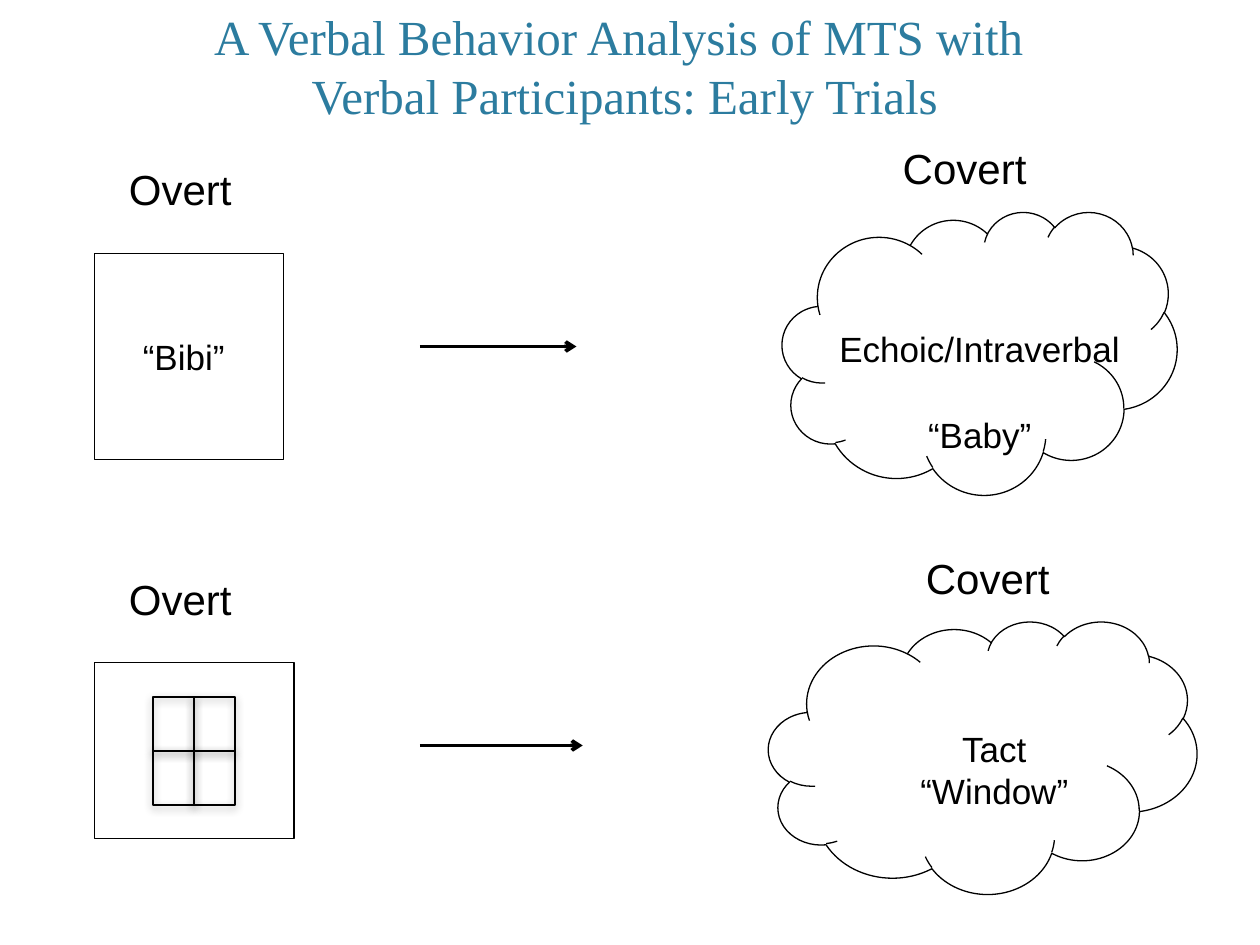
from dataclasses import dataclass

from lxml.etree import SubElement
from pptx import Presentation
from pptx.dml.color import RGBColor
from pptx.enum.shapes import MSO_CONNECTOR as CONN, MSO_SHAPE as SHAPE
from pptx.enum.text import MSO_ANCHOR as ANCHOR, PP_ALIGN as ALIGN
from pptx.oxml.ns import qn
from pptx.util import Inches, Pt


@dataclass(frozen=True)
class Theme:
    """Colours, fonts, type sizes and line widths of the slide."""
    ink: RGBColor = RGBColor(0, 0, 0)
    accent: RGBColor = RGBColor(0x2C, 0x7C, 0x9F)
    sans: str = "Arial"
    serif: str = "Times New Roman"
    title: int = 28
    heading: int = 24
    body: int = 20
    outline: float = 0.75
    pane: float = 1
    arrow: float = 2


@dataclass(frozen=True)
class Box:
    """A region in grid units; the slide is 120 columns by 90 rows."""
    col: float
    row: float
    cols: float
    rows: float

    def sub(self, col, row, cols, rows):
        """Return a box placed relative to this one."""
        return Box(self.col + col, self.row + row, cols, rows)

    def emu(self):
        """Return left, top, width and height as lengths."""
        return [Inches(v / 12) for v in (self.col, self.row, self.cols, self.rows)]


T = Theme()
TITLE = {"name": T.serif, "size": Pt(T.title)}
HEADING = {"name": T.sans, "size": Pt(T.heading)}
BODY = {"name": T.sans, "size": Pt(T.body)}


def add_text(s, box, lines, font, color=T.ink, align=ALIGN.CENTER,
             anchor=ANCHOR.MIDDLE, gap=0):
    """Add a text box with one paragraph per line."""
    tf = s.add_textbox(*box.emu()).text_frame
    for key, value in {"word_wrap": True, "vertical_anchor": anchor}.items():
        setattr(tf, key, value)
    for i, line in enumerate(lines):
        p = tf.add_paragraph() if i else tf.paragraphs[0]
        p.alignment = align
        p.space_before = Pt(gap if i else 0)
        r = p.add_run()
        r.text = line
        r.font.color.rgb = color
        for key, value in font.items():
            setattr(r.font, key, value)


def add_heading(s, box, text):
    """Add a left-aligned heading at the top of its box."""
    add_text(s, box, [text], HEADING, align=ALIGN.LEFT, anchor=ANCHOR.TOP)


def add_outline(s, kind, box, width=T.outline):
    """Add an unfilled preset shape with a plain outline."""
    sp = s.add_shape(kind, *box.emu())
    sp.shadow.inherit = False
    sp.fill.background()
    sp.line.color.rgb = T.ink
    sp.line.width = Pt(width)
    return sp


def add_glow(sp):
    """Give a shape a soft shadow below it."""
    effects = sp._element.spPr.find(qn("a:effectLst"))
    shadow = SubElement(effects, qn("a:outerShdw"), blurRad=str(Pt(5)),
                        dist=str(Pt(2)), dir="5400000", rotWithShape="0")
    color = SubElement(shadow, qn("a:srgbClr"), val=str(T.ink))
    SubElement(color, qn("a:alpha"), val="40000")


def add_arrow(s, box):
    """Add an arrow running along the top edge of its box."""
    x, y, w, _ = box.emu()
    c = s.add_connector(CONN.STRAIGHT, x, y, x + w, y)
    c.line.color.rgb = T.ink
    c.line.width = Pt(T.arrow)
    SubElement(c.line._get_or_add_ln(), qn("a:tailEnd"), type="arrow")
    SubElement(c._element.spPr, qn("a:effectLst"))


def add_window(s, box):
    """Divide the box into a two by two window of panes."""
    w, h = box.cols / 2, box.rows / 2
    for i in range(4):
        pane = box.sub(i // 2 * w, i % 2 * h, w, h)
        add_glow(add_outline(s, SHAPE.RECTANGLE, pane, T.pane))


def add_overt(s, box, word=None):
    """Add the overt card, holding a word or else a window."""
    card = box.sub(0, 9.12, box.cols, box.rows - 9.12)
    add_outline(s, SHAPE.RECTANGLE, card)
    add_heading(s, box.sub(2.1, 0, 13.8, 6), "Overt")
    if word:
        add_text(s, card.sub(-0.5, 0, card.cols, card.rows), [word], BODY)
    else:
        w, h = 7.8, 10.3
        add_window(s, card.sub((card.cols - w) / 2, (card.rows - h) / 2, w, h))


def add_covert(s, box, lines, indent, shift, gap=0):
    """Add the covert cloud with its heading and response."""
    cloud = box.sub(0, 7.15, box.cols, box.rows - 7.15)
    add_outline(s, SHAPE.CLOUD, cloud)
    add_heading(s, box.sub(indent, 0, 19.5, 6), "Covert")
    add_text(s, cloud.sub(*shift, cloud.cols, cloud.rows), lines, BODY, gap=gap)


def main():
    """Build the slide and save it."""
    prs = Presentation()
    prs.slide_width, prs.slide_height = Inches(10), Inches(7.5)
    slide = prs.slides.add_slide(prs.slide_layouts[6])

    def group():
        """Start a new group of shapes."""
        return slide.shapes.add_group_shape().shapes

    add_overt(group(), Box(9, 54, 19, 25.9))
    s = group()
    add_arrow(s, Box(40, 71, 15.5, 0))
    add_covert(s, Box(73.2, 52, 40.8, 33.1), ["Tact", "“Window”"], 13.8, (1.1, 1.2))
    add_overt(group(), Box(9, 15, 18, 28.8), "“Bibi”")
    s = group()
    add_covert(s, Box(74.5, 13, 37.6, 34.1), ["Echoic/Intraverbal", "“Baby”"],
               10.3, (0, 3.7), gap=25)
    add_arrow(s, Box(40, 33, 14.9, 0))
    add_text(slide.shapes, Box(7, 0, 105, 12.5),
             ["A Verbal Behavior Analysis of MTS with ",
              "Verbal Participants: Early Trials"], TITLE, T.accent)
    prs.save("out.pptx")


if __name__ == "__main__":
    main()
